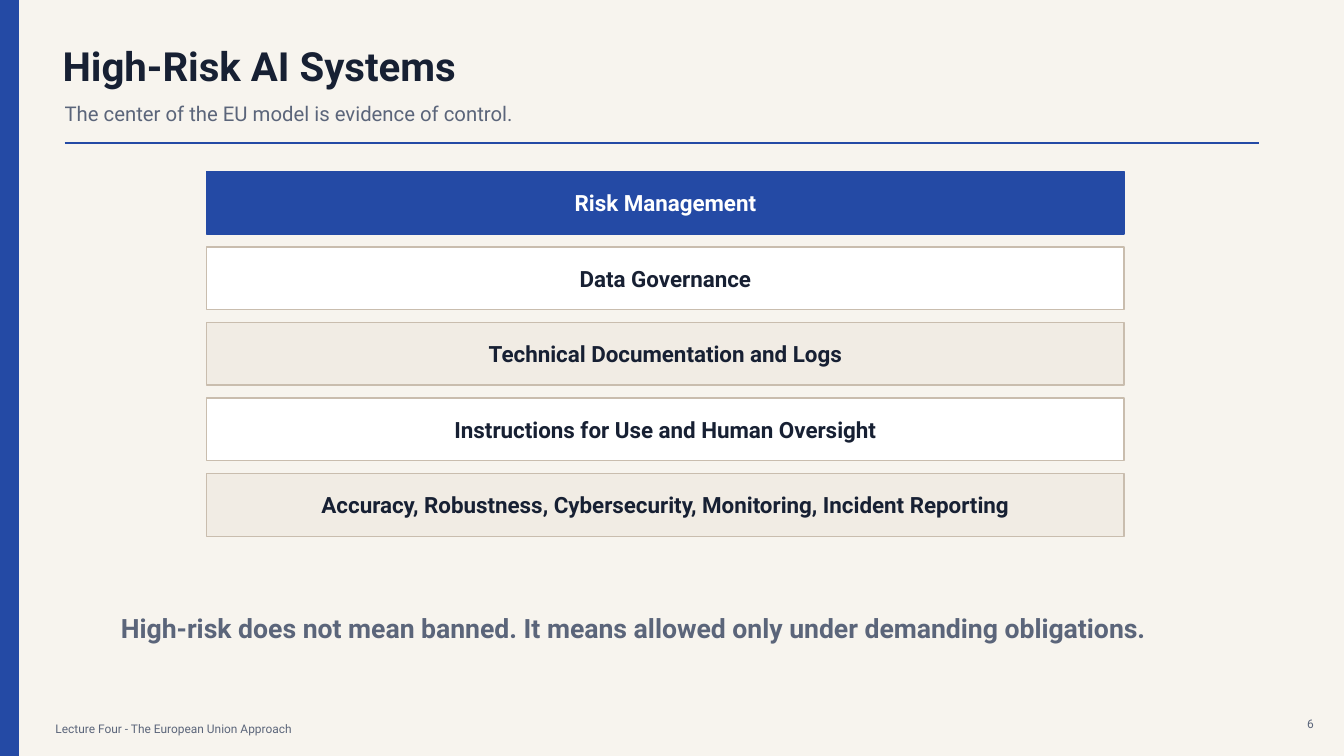
import pptx
import pptx.util
import pptx.dml.color
import pptx.enum.shapes
import pptx.enum.text
import pptx.oxml

Inches = pptx.util.Inches
Align = pptx.enum.text.PP_ALIGN
Kind = pptx.enum.shapes.MSO_SHAPE

BLUE, INK, GRAY = "244AA5", "172033", "5B657A"
WHITE, SAND, TAN, CREAM = "FFFFFF", "F1ECE4", "C9BDAE", "F7F4EE"

TITLE = ("High-Risk AI Systems", (0.62, 0.42, 9.8, 0.45),
         {"size": 28.7, "color": INK, "bold": True})
NOTES = [
    ("Lecture Four - The European Union Approach", (0.55, 7.13, 9, 0.2),
     {"size": 8.5, "color": GRAY}),
    ("6", (12.75, 7.08, 0.28, 0.2),
     {"size": 8.5, "color": GRAY, "align": Align.RIGHT}),
    ("The center of the EU model is evidence of control.",
     (0.64, 0.95, 10.9, 0.35), {"size": 14.5, "color": GRAY}),
    ("High-risk does not mean banned. "
     "It means allowed only under demanding obligations.",
     (1.2, 6, 10.4, 0.45), {"size": 19, "color": GRAY, "bold": True}),
]
DUTIES = [
    "Risk Management",
    "Data Governance",
    "Technical Documentation and Logs",
    "Instructions for Use and Human Oversight",
    "Accuracy, Robustness, Cybersecurity, Monitoring, Incident Reporting",
]
LEFT, TOP, WIDTH, HEIGHT, STEP = 2.05, 1.7, 9.1, 0.62, 0.75


def rgb(code):
    return pptx.dml.color.RGBColor.from_string(code)


def write(shape, text, size, color, bold=False, align=Align.LEFT):
    frame = shape.text_frame
    layout = {
        "word_wrap": True,
        "auto_size": pptx.enum.text.MSO_AUTO_SIZE.NONE,
        "vertical_anchor": pptx.enum.text.MSO_ANCHOR.MIDDLE,
        "margin_left": 0, "margin_right": 0,
        "margin_top": 0, "margin_bottom": 0,
    }
    for key, value in layout.items():
        setattr(frame, key, value)
    frame.text = text
    para = frame.paragraphs[0]
    para.alignment = align
    font = para.runs[0].font
    style = {"name": "Roboto", "size": pptx.util.Pt(size), "bold": bold}
    for key, value in style.items():
        setattr(font, key, value)
    font.color.rgb = rgb(color)


def add_bar(slide, place, fill, edge):
    bar = slide.shapes.add_shape(Kind.RECTANGLE, *map(Inches, place))
    bar.shadow.inherit = False
    bar.fill.solid()
    bar.fill.fore_color.rgb = rgb(fill)
    bar.line.color.rgb = rgb(edge)
    bar.line.width = pptx.util.Pt(1)
    return bar


def add_rule(slide, start, end):
    rule = slide.shapes.add_connector(
        pptx.enum.shapes.MSO_CONNECTOR.STRAIGHT, *map(Inches, start + end))
    rule.line.color.rgb = rgb(BLUE)
    rule.line.width = pptx.util.Pt(1.25)
    props = rule._element.spPr
    props.append(pptx.oxml.parse_xml(
        '<a:effectLst xmlns:a='
        '"http://schemas.openxmlformats.org/drawingml/2006/main"/>'))


def main():
    deck = pptx.Presentation()
    deck.slide_width, deck.slide_height = Inches(13.33), Inches(7.5)
    slide = deck.slides.add_slide(deck.slide_layouts[5])
    slide.background.fill.solid()
    slide.background.fill.fore_color.rgb = rgb(CREAM)

    add_bar(slide, (0, 0, 0.18, 7.5), BLUE, BLUE)

    text, place, style = TITLE
    title = slide.shapes.title
    for key, value in zip(("left", "top", "width", "height"), place):
        setattr(title, key, Inches(value))
    write(title, text, **style)

    for text, place, style in NOTES:
        box = slide.shapes.add_textbox(*map(Inches, place))
        write(box, text, **style)

    add_rule(slide, (0.64, 1.42), (12.49, 1.42))

    for row, duty in enumerate(DUTIES):
        fill, edge, ink = (SAND, WHITE)[row % 2], TAN, INK
        if row == 0:
            fill, edge, ink = BLUE, BLUE, WHITE
        place = (LEFT, TOP + row * STEP, WIDTH, HEIGHT)
        bar = add_bar(slide, place, fill, edge)
        write(bar, duty, 16, ink, True, Align.CENTER)

    deck.save("out.pptx")


if __name__ == "__main__":
    main()
